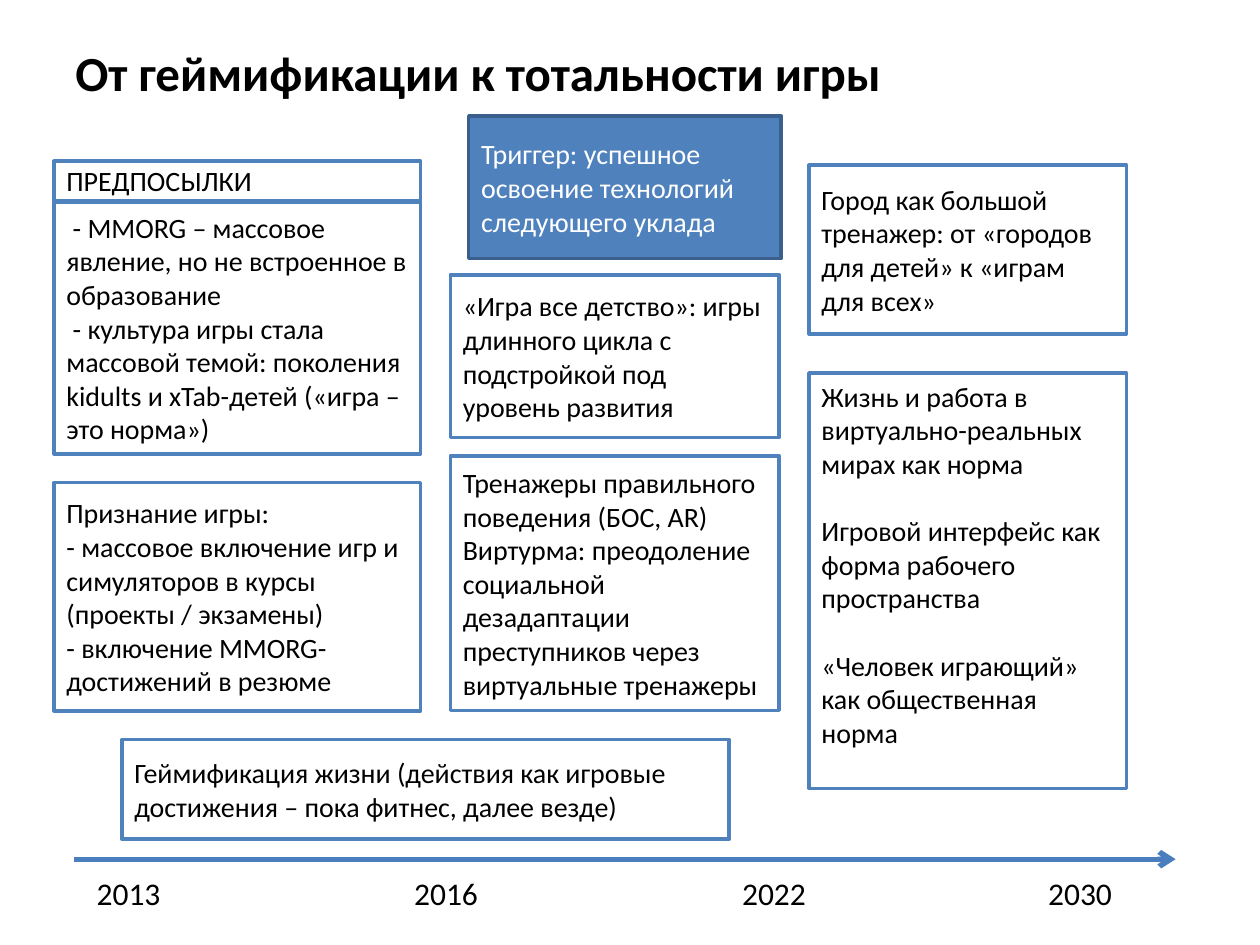
from pptx import Presentation
from pptx.dml.color import RGBColor
from pptx.enum.shapes import MSO_CONNECTOR, MSO_SHAPE
from pptx.enum.text import MSO_ANCHOR, MSO_AUTO_SIZE, PP_ALIGN
from pptx.oxml.ns import qn
from pptx.util import Cm, Pt
from lxml import etree

RECT = MSO_SHAPE.RECTANGLE
STRAIGHT = MSO_CONNECTOR.STRAIGHT
TOP, MIDDLE = MSO_ANCHOR.TOP, MSO_ANCHOR.MIDDLE
LEFT = PP_ALIGN.LEFT
FIT = MSO_AUTO_SIZE.SHAPE_TO_FIT_TEXT

BLUE, DARK_BLUE, AXIS_BLUE = "4F81BD", "3A5F8C", "4B7EBC"
WHITE, BLACK = "FFFFFF", "000000"

LEFT_COL, MID_COL, RIGHT_COL = (1.09, 7.39), (9.08, 6.63), (16.31, 6.4)

BOXES = [
    (LEFT_COL, 4.07, 5.08, [
        " - MMORG – массовое явление, но не встроенное в образование",
        " - культура игры стала массовой темой: поколения kidults и "
        "xTab-детей («игра – это норма»)"], {}),
    (LEFT_COL, 3.25, 0.79, ["ПРЕДПОСЫЛКИ"], {}),
    (LEFT_COL, 9.73, 4.6, [
        "Признание игры:",
        "- массовое включение игр и симуляторов в курсы (проекты / экзамены)",
        "- включение MMORG-достижений в резюме"], {}),
    ((2.46, 12.24), 14.91, 2.01, [
        "Геймификация жизни (действия как игровые достижения – "
        "пока фитнес, далее везде)"], {}),
    (MID_COL, 5.54, 3.28, [
        "«Игра все детство»: игры длинного цикла с подстройкой под "
        "уровень развития"], {}),
    (MID_COL, 9.19, 5.13, [
        "Тренажеры правильного поведения (БОС, AR)",
        "Виртурма: преодоление социальной дезадаптации преступников через "
        "виртуальные тренажеры"], {}),
    (RIGHT_COL, 7.52, 8.38, [
        "Жизнь и работа в виртуально-реальных мирах как норма",
        "Игровой интерфейс как форма рабочего пространства",
        "«Человек играющий» как общественная норма"],
        {"anchor": TOP, "gap": 19.3}),
    (RIGHT_COL, 3.33, 3.4, [
        "Город как большой тренажер: от «городов для детей» к "
        "«играм для всех»"], {}),
    ((9.45, 6.3), 2.34, 2.87, [
        "Триггер: успешное освоение технологий следующего уклада"],
        {"fill": BLUE, "line": DARK_BLUE, "color": WHITE}),
]
YEARS = {"2013": 1.7, "2016": 8.1, "2022": 14.71, "2030": 20.88}


def rgb(value):
    return RGBColor.from_string(value)


def apply(target, values):
    for name, value in values.items():
        setattr(target, name, value)


class SlideBuilder:
    """Holds the text style and the current slide, and draws its elements."""

    font = {"name": "Calibri", "size": Pt(16), "bold": False}

    def __init__(self, slide):
        self.s = slide

    def add_text(self, tf, lines, color=BLACK, gap=0, **font):
        for i, line in enumerate(lines):
            p = tf.paragraphs[0] if i == 0 else tf.add_paragraph()
            apply(p, {"alignment": LEFT, "space_after": Pt(gap)})
            r = p.add_run()
            r.text = line
            apply(r.font, {**self.font, **font})
            r.font.color.rgb = rgb(color)

    def box(self, column, top, height, lines, fill=WHITE, line=BLUE,
            color=BLACK, anchor=MIDDLE, gap=0):
        left, width = column
        sp = self.s.shapes.add_shape(RECT, Cm(left), Cm(top), Cm(width), Cm(height))
        sp.shadow.inherit = False
        sp.fill.solid()
        sp.fill.fore_color.rgb = rgb(fill)
        sp.line.color.rgb = rgb(line)
        sp.line.width = Pt(2)
        apply(sp.text_frame, {"word_wrap": True, "vertical_anchor": anchor})
        self.add_text(sp.text_frame, lines, color, gap)

    def label(self, left, top, width, height, text, **font):
        sp = self.s.shapes.add_textbox(Cm(left), Cm(top), Cm(width), Cm(height))
        apply(sp.text_frame, {"word_wrap": False, "auto_size": FIT})
        self.add_text(sp.text_frame, [text], **font)

    def arrow(self, x1, x2, y):
        c = self.s.shapes.add_connector(STRAIGHT, Cm(x1), Cm(y), Cm(x2), Cm(y))
        c.line.color.rgb = rgb(AXIS_BLUE)
        c.line.width = Pt(3)
        sp_pr = c._element.spPr
        etree.SubElement(sp_pr.find(qn("a:ln")), qn("a:tailEnd"), type="arrow")
        etree.SubElement(sp_pr, qn("a:effectLst"))


def main():
    prs = Presentation()
    apply(prs, {"slide_width": Cm(25.4), "slide_height": Cm(19.05)})
    builder = SlideBuilder(prs.slides.add_slide(prs.slide_layouts[6]))
    builder.label(1.27, 0.74, 16.92, 1.45, "От геймификации к тотальности игры",
                  size=Pt(28), bold=True)
    builder.arrow(1.5, 23.7, 17.32)
    for year, left in YEARS.items():
        builder.label(left, 17.5, 1.8, 1.02, year, size=Pt(18))
    for column, top, height, lines, style in BOXES:
        builder.box(column, top, height, lines, **style)
    prs.save("out.pptx")


if __name__ == "__main__":
    main()
